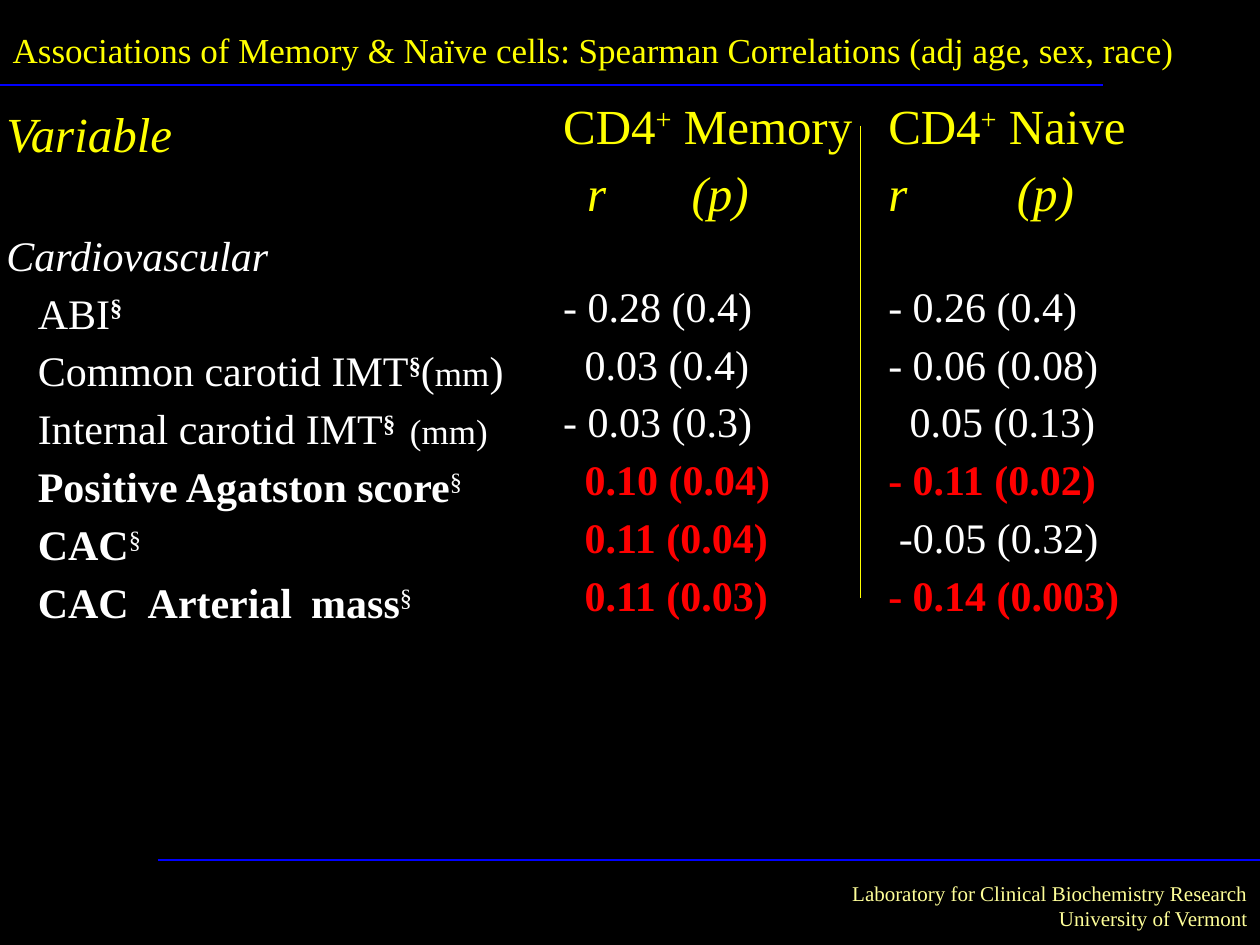
import dataclasses
import typing

import lxml.etree
import pptx
import pptx.dml.color
import pptx.enum.shapes
import pptx.enum.text
import pptx.oxml.ns
import pptx.util

Inches, Pt = pptx.util.Inches, pptx.util.Pt
Align, Anchor = pptx.enum.text.PP_ALIGN, pptx.enum.text.MSO_ANCHOR
qn = pptx.oxml.ns.qn
WIDE, HIGH = 10, 7.5


@dataclasses.dataclass(frozen=True)
class Theme:
    back: str = "000000"
    ink: str = "FFFFFF"
    head: str = "FFFF00"
    hot: str = "FF0000"
    foot: str = "FFFF99"
    rule: str = "0000FF"
    font: str = "Times New Roman"
    mono: str = "Noto Sans Mono"
    big: int = 28
    text: int = 24
    small: int = 20
    gap: int = 18
    note: int = 12
    line: float = 0.75


LOOK = Theme()


class Run(typing.NamedTuple):
    text: str
    bold: bool = False
    italic: bool = False
    sup: bool = False
    size: float = LOOK.text
    color: str = LOOK.ink
    font: str = LOOK.font


class Cell(typing.NamedTuple):
    runs: list[Run]
    indent: float = 0
    tabs: tuple[float, ...] = ()


class Rule(typing.NamedTuple):
    """A line whose ends are shares of the slide's size."""
    left: float
    top: float
    right: float
    low: float
    color: str


def rgb(code: str) -> pptx.dml.color.RGBColor:
    return pptx.dml.color.RGBColor.from_string(code)


def write(par, runs: list[Run]) -> None:
    for item in runs:
        run = par.add_run()
        run.text = item.text
        form = {"name": item.font, "size": Pt(item.size),
                "bold": item.bold, "italic": item.italic}
        for key, value in form.items():
            setattr(run.font, key, value)
        run.font.color.rgb = rgb(item.color)
        if item.sup:
            run.font._element.set("baseline", "30000")


def fill(box, cell: Cell, space: float) -> None:
    form = {"margin_left": Inches(0.05), "margin_right": Inches(0.05),
            "margin_top": 0, "margin_bottom": 0, "vertical_anchor": Anchor.TOP}
    for key, value in form.items():
        setattr(box, key, value)
    box.fill.background()
    par = box.text_frame.paragraphs[0]
    par.line_spacing = space
    write(par, cell.runs)
    props = par._p.get_or_add_pPr()
    if cell.indent:
        props.set("marL", str(Inches(cell.indent)))
    if cell.tabs:
        stops = lxml.etree.SubElement(props, qn("a:tabLst"))
        for stop in cell.tabs:
            lxml.etree.SubElement(stops, qn("a:tab"), pos=str(Inches(stop)), algn="l")


def draw(slide, rule: Rule) -> None:
    line = slide.shapes.add_connector(
        pptx.enum.shapes.MSO_CONNECTOR.STRAIGHT,
        Inches(rule.left * WIDE), Inches(rule.top * HIGH),
        Inches(rule.right * WIDE), Inches(rule.low * HIGH))
    line.line.color.rgb = rgb(rule.color)
    line.line.width = Pt(LOOK.line)
    lxml.etree.SubElement(line._element.spPr, qn("a:effectLst"))


def place(shape, left: float, top: float, width: float, height: float) -> None:
    form = {"left": left, "top": top, "width": width, "height": height}
    for key, value in form.items():
        setattr(shape, key, Inches(value))
    shape.text_frame.word_wrap = False


# Cell builders
def title(text: str, **form) -> Run:
    return Run(text, size=LOOK.big, color=LOOK.head, **form)


def name(text: str) -> Cell:
    return Cell([title(text), title("+", sup=True)])


def pair(*tabs: float) -> Cell:
    return Cell([title("\t" * (len(tabs) - 1) + "r\t(p)", italic=True)], tabs=tabs)


def label(*runs: Run) -> Cell:
    return Cell(list(runs), indent=0.25)


def value(text: str, indent: float = 0, hot: bool = False) -> Cell:
    return Cell([Run(text, bold=hot, color=LOOK.hot if hot else LOOK.ink)], indent)


def group(text: str, arm: str) -> Cell:
    cell = name(text)
    return cell._replace(runs=cell.runs + [title(" " + arm)])


MARK = Run("§", sup=True)
BOLD = MARK._replace(bold=True)
SPACE = Run(" ", bold=True, size=LOOK.gap, font=LOOK.mono)
NONE = Cell([])
STEP = 0.17  # shift of values without a minus sign

ROWS = [
    [Cell([title("Variable", italic=True)]), group("CD4", "Memory"), group("CD4", "Naive")],
    [NONE, pair(0.19, 1.02), pair(1.02)],
    [Cell([Run("Cardiovascular", italic=True)]), NONE, NONE],
    [label(Run("ABI"), BOLD), value("- 0.28 (0.4)"), value("- 0.26 (0.4)")],
    [label(Run("Common carotid IMT"), BOLD, Run("("), Run("mm", size=LOOK.small), Run(")")),
     value("0.03 (0.4)", STEP), value("- 0.06 (0.08)")],
    [label(Run("Internal carotid IMT"), BOLD._replace(text="§ "),
           Run(" (mm)", size=LOOK.small)),
     value("- 0.03 (0.3)"), value("0.05 (0.13)", STEP)],
    [label(Run("Positive Agatston score", bold=True), MARK),
     value("0.10 (0.04)", STEP, True), value("- 0.11 (0.02)", hot=True)],
    [label(Run("CAC", bold=True), MARK),
     value("0.11 (0.04)", STEP, True), value("-0.05 (0.32)", STEP / 2)],
    [label(Run("CAC", bold=True), SPACE, Run("Arterial", bold=True), SPACE,
           Run("mass", bold=True), MARK),
     value("0.11 (0.03)", STEP, True), value("- 0.14 (0.003)", hot=True)],
]
COLS = [4.42, 2.58, 2.59]
TALL = [0.53, 0.47] + [0.46] * 7
RULES = [Rule(0.125, 0.91, 1, 0.91, LOOK.rule),
         Rule(0, 0.09, 0.875, 0.09, LOOK.rule),
         Rule(0.683, 0.133, 0.683, 0.633, LOOK.head)]


def main() -> None:
    deck = pptx.Presentation()
    deck.slide_width, deck.slide_height = Inches(WIDE), Inches(HIGH)
    slide = deck.slides.add_slide(deck.slide_layouts[5])
    slide.background.fill.solid()
    slide.background.fill.fore_color.rgb = rgb(LOOK.back)

    # Title
    head = slide.shapes.title
    place(head, 0, 0.17, 9.48, 0.44)
    par = head.text_frame.paragraphs[0]
    par.alignment = Align.LEFT
    write(par, [Run("Associations of Memory & Naïve cells: Spearman Correlations "
                    "(adj age, sex, race)", size=LOOK.small, color=LOOK.head)])

    # Correlation table
    frame = slide.shapes.add_table(len(ROWS), len(COLS), 0, Inches(0.8),
                                   Inches(sum(COLS)), Inches(sum(TALL)))
    grid = frame.table
    grid.first_row = grid.horz_banding = False
    style = grid._tbl.tblPr.find(qn("a:tableStyleId"))
    style.text = "{2D5ABB26-0587-4C30-8999-92F81FD0307C}"  # no style, no grid
    for col, width in zip(grid.columns, COLS):
        col.width = Inches(width)
    for row, height, cells in zip(grid.rows, TALL, ROWS):
        row.height = Inches(height)
        for spot, (box, cell) in enumerate(zip(row.cells, cells)):
            fill(box, cell, 1 if spot else 1.15)

    # Rules
    for rule in RULES:
        draw(slide, rule)

    # Footer
    foot = slide.shapes.add_textbox(0, 0, 0, 0)
    place(foot, 6.65, 6.94, 3.35, 0.5)
    frame = foot.text_frame
    for spot, text in enumerate(["Laboratory for Clinical Biochemistry Research",
                                 "University of Vermont"]):
        par = frame.add_paragraph() if spot else frame.paragraphs[0]
        par.alignment = Align.RIGHT
        write(par, [Run(text, size=LOOK.note, color=LOOK.foot)])

    deck.save("out.pptx")


if __name__ == "__main__":
    main()
